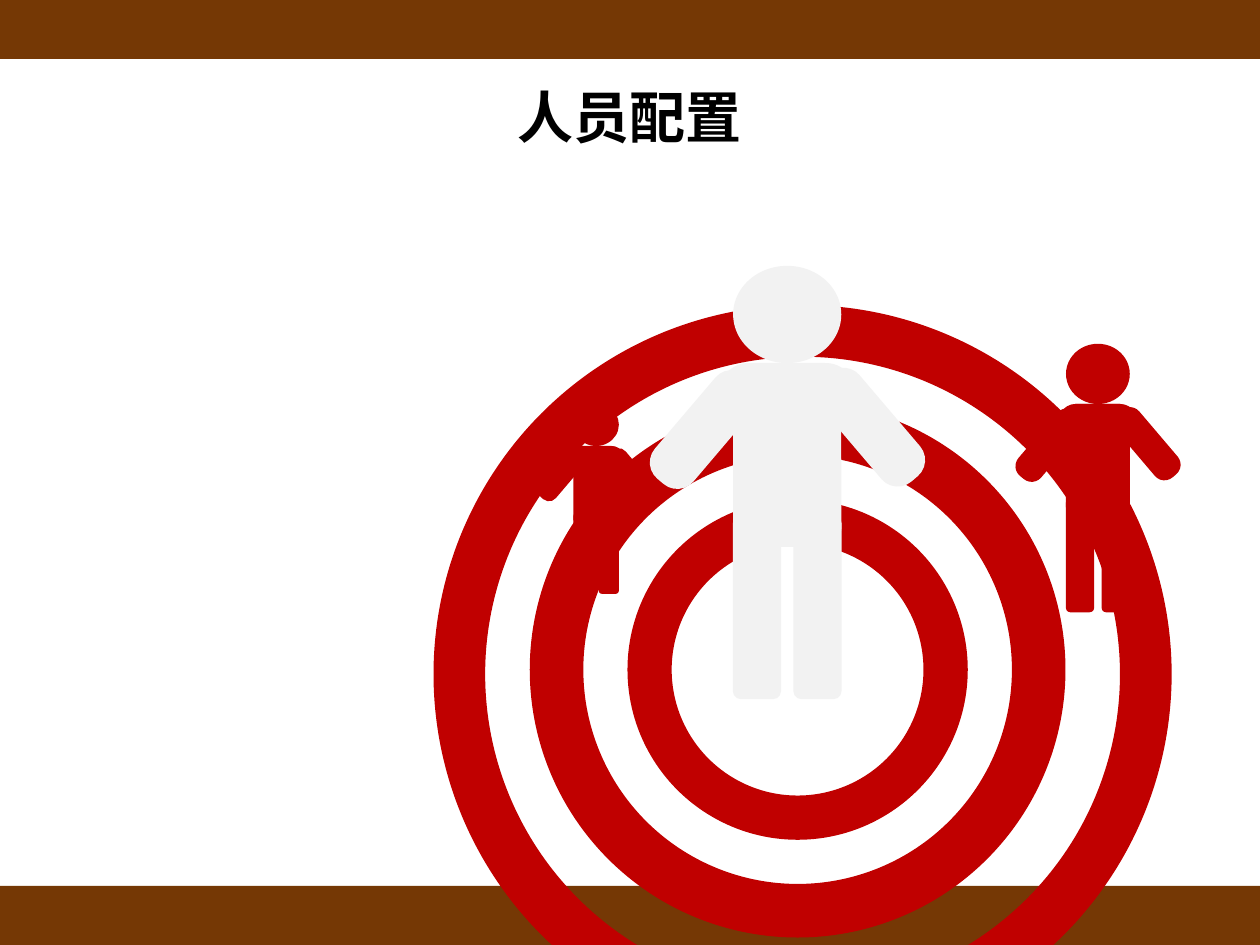
"""Build the staffing slide: a ring target with three human figures."""
from lxml.etree import SubElement
from pptx import Presentation
from pptx.dml.color import RGBColor
from pptx.enum.shapes import MSO_SHAPE as Preset
from pptx.enum.text import MSO_ANCHOR as Anchor, PP_ALIGN as Align
from pptx.oxml.ns import qn
from pptx.util import Cm, Pt

BROWN, RED, PALE, BLACK = "753805", "C00000", "F2F2F2", "000000"
FONT = "Noto Sans CJK SC"
WIDTH, HEIGHT, BAND = 25.4, 19.05, 1.19


def colour(fill, code):
    fill.solid()
    fill.fore_color.rgb = RGBColor.from_string(code)


def add_centred(shapes, preset, x, y, width, height, code, adjust=None):
    part = shapes.add_shape(preset, Cm(x - width / 2), Cm(y - height / 2), Cm(width), Cm(height))
    part.shadow.inherit = False
    colour(part.fill, code)
    part.line.fill.background()
    if adjust is not None:
        part.adjustments[0] = adjust
    return part


prs = Presentation()
prs.slide_width, prs.slide_height = Cm(WIDTH), Cm(HEIGHT)
slide = prs.slides.add_slide(prs.slide_layouts[5])

for band_y in (BAND / 2, HEIGHT - BAND / 2):
    add_centred(slide.shapes, Preset.RECTANGLE, WIDTH / 2, band_y, WIDTH, BAND, BROWN)

title = slide.shapes.title
title.left, title.top, title.width, title.height = Cm(1.27), Cm(0.76), Cm(22.86), Cm(3.18)
title.text_frame.text = "人员配置"
title.text_frame.vertical_anchor = Anchor.MIDDLE
heading = title.text_frame.paragraphs[0]
heading.alignment = Align.CENTER
heading.font.size = Pt(32)
heading.font.bold = True
heading.font.name = FONT
colour(heading.font.fill, BLACK)
east_asian = SubElement(heading._p.pPr.find(qn("a:defRPr")), qn("a:ea"))
east_asian.set("typeface", FONT)

target = slide.shapes.add_group_shape()
for x, y, diameter, thickness in (
    (16.08, 13.5, 6.86, 0.13),
    (16.08, 13.5, 10.8, 0.1),
    (16.18, 13.59, 14.88, 0.07),
):
    add_centred(target.shapes, Preset.DONUT, x, y, diameter, diameter, RED, thickness)

body_parts = (
    (Preset.OVAL, 1.09, 0.98, 2.18, 1.96, 0, None),
    (Preset.ROUNDED_RECTANGLE, 1.09, 3.81, 2.18, 3.71, 0, None),
    (Preset.ROUNDED_RECTANGLE, 0.48, 6.88, 0.97, 3.71, 0, None),
    (Preset.ROUNDED_RECTANGLE, 1.7, 6.88, 0.97, 3.71, 0, None),
    (Preset.ROUNDED_RECTANGLE, 1.09, 2.62, 2.69, 1.32, 0, 0.42),
    (Preset.ROUNDED_RECTANGLE, -0.58, 3.3, 1.02, 2.74, 40.4, 0.42),
    (Preset.ROUNDED_RECTANGLE, 2.77, 3.25, 1.02, 2.74, 319.6, 0.42),
)
people = (
    (14.78, 5.36, 1, 1, PALE),
    (21.49, 6.93, 0.59, 0.62, RED),
    (11.56, 8.13, 0.42, 0.44, RED),
)
for left, top, scale_x, scale_y, code in people:
    person = slide.shapes.add_group_shape()
    for preset, x, y, width, height, turn, rounding in body_parts:
        limb = add_centred(
            person.shapes, preset, left + x * scale_x, top + y * scale_y,
            width * scale_x, height * scale_y, code, rounding,
        )
        limb.rotation = turn

prs.save("out.pptx")
